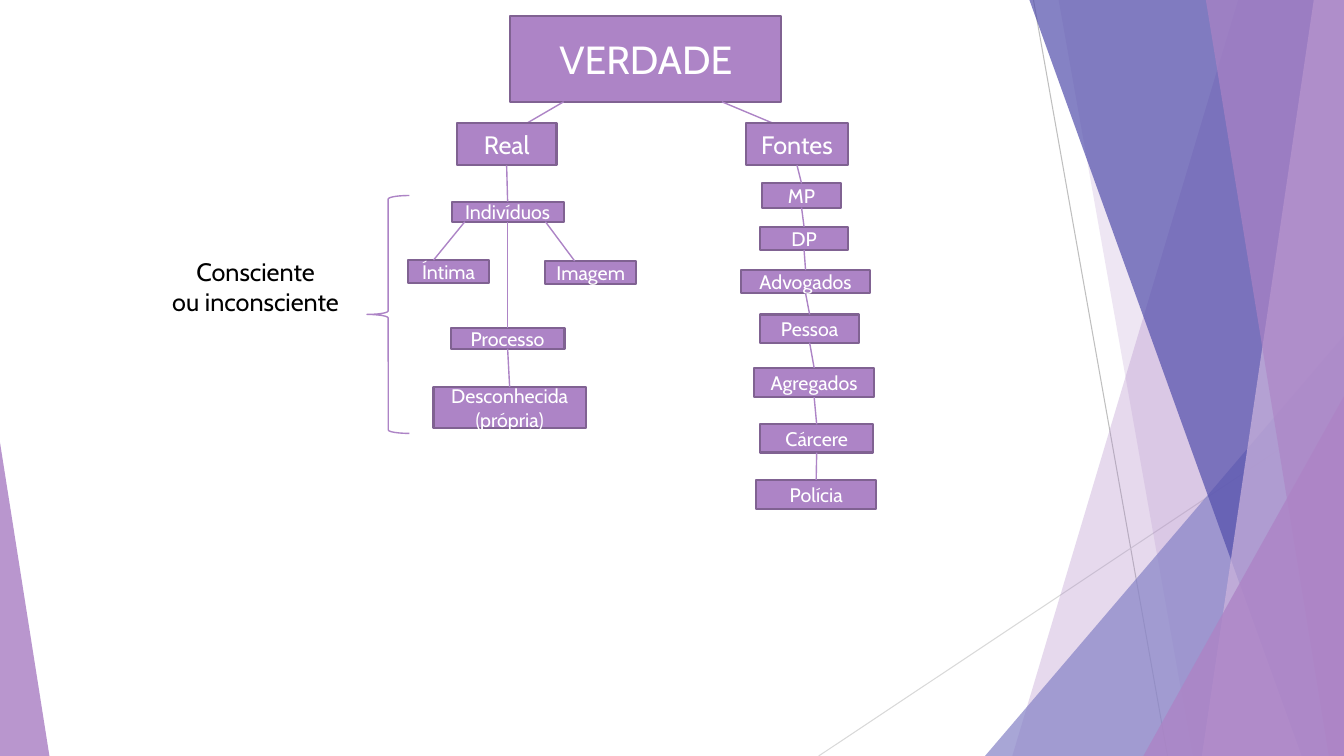
from itertools import pairwise

from lxml.etree import SubElement
from pptx import Presentation
from pptx.dml.color import RGBColor
from pptx.enum.shapes import MSO_CONNECTOR, MSO_SHAPE
from pptx.enum.text import MSO_ANCHOR, PP_ALIGN
from pptx.oxml.ns import qn
from pptx.util import Pt

PX = 9144  # 100 px to the inch
WIDTH, HEIGHT = 1333, 750
FONT = "Cabin"
COLORS = {
    "purple": "AD84C6", "border": "806292", "lilac": "CEB5DD",
    "periwinkle": "8784C7", "indigo": "524EAB", "gray": "BFBFBF",
    "light_gray": "D9D9D9", "white": "FFFFFF", "black": "000000",
}
TOP_SITE, BOTTOM_SITE = 0, 2


def color(name):
    return RGBColor.from_string(COLORS[name])


def px(*lengths):
    return [length * PX for length in lengths]


def fill_shape(shape, name, opacity=100):
    shape.shadow.inherit = False
    shape.fill.solid()
    shape.fill.fore_color.rgb = color(name)
    if opacity < 100:
        srgb = shape.fill._xPr.find(qn("a:solidFill")).find(qn("a:srgbClr"))
        SubElement(srgb, qn("a:alpha"), val=str(opacity * 1000))


def add_line(slide, start, end, name="purple", weight=1):
    line = slide.shapes.add_connector(MSO_CONNECTOR.STRAIGHT, *px(*start, *end))
    line.line.color.rgb = color(name)
    line.line.width = Pt(weight)
    SubElement(line._element.spPr, qn("a:effectLst"))
    return line


def link(slide, upper, lower):
    """Join the bottom middle of one box to the top middle of the next."""
    line = add_line(slide, (0, 0), (0, 0))
    line.begin_connect(upper, BOTTOM_SITE)
    line.end_connect(lower, TOP_SITE)


def write(shape, text, size, name):
    frame = shape.text_frame
    frame.word_wrap = True
    frame.vertical_anchor = MSO_ANCHOR.MIDDLE
    frame.margin_left = frame.margin_right = 0
    frame.text = text
    for paragraph in frame.paragraphs:
        paragraph.alignment = PP_ALIGN.CENTER
        paragraph.font.name = FONT
        paragraph.font.size = Pt(size)
        paragraph.font.color.rgb = color(name)


def add_box(slide, text, left, top, width, height, size=14):
    box = slide.shapes.add_shape(MSO_SHAPE.RECTANGLE, *px(left, top, width, height))
    fill_shape(box, "purple")
    box.line.color.rgb = color("border")
    box.line.width = Pt(1.5)
    write(box, text, size, "white")
    return box


def add_ribbon(slide, width, height, top_x, bottom_x, name, opacity):
    """Fill from a slanted edge to the right side of the area."""
    builder = slide.shapes.build_freeform(top_x, 0, scale=PX)
    builder.add_line_segments([(width, 0), (width, height), (bottom_x, height)])
    ribbon = builder.convert_to_shape()
    fill_shape(ribbon, name, opacity)
    ribbon.line.fill.background()


def add_corner(slide, left, top, width, height, apex, name, opacity):
    corner = slide.shapes.add_shape(
        MSO_SHAPE.ISOSCELES_TRIANGLE, *px(left, top, width, height))
    corner.adjustments[0] = apex
    fill_shape(corner, name, opacity)
    corner.line.fill.background()


def add_backdrop(slide, width, height):
    def right_corner(corner_width, corner_height, name, opacity):
        add_corner(slide, width - corner_width, height - corner_height,
                   corner_width, corner_height, 1, name, opacity)

    def ribbons(*edges):
        for edge in edges:
            add_ribbon(slide, width, height, *edge)

    add_line(slide, (1025, 0), (1158, height), "gray", 0.75)
    add_line(slide, (width, 403), (812, height), "light_gray", 0.75)
    ribbons((1228, 1004, "purple", 30), (1050, 1183, "purple", 20))
    right_corner(356, 417, "periwinkle", 72)
    ribbons((1021, 1291, "indigo", 70), (1303, 1192, "lilac", 70),
            (1196, 1318, "purple", 65))
    right_corner(199, 357, "purple", 80)
    add_corner(slide, 0, height - 311, 49, 311, 0, "purple", 85)


def add_real_branch(slide, left, top):
    def box(text, x, y, width, height, size=14):
        return add_box(slide, text, left + x, top + y, width, height, size)

    real = box("Real", 48, 0, 99, 42, 18)
    individuals = box("Indivíduos", 43, 78, 111, 20)
    box("Íntima", 0, 136, 80, 23)
    box("Imagem", 136, 137, 90, 23)
    process = box("Processo", 42, 203, 113, 21)
    unknown = box("Desconhecida\n(própria)", 25, 262, 151, 41)
    for upper, lower in pairwise([real, individuals, process, unknown]):
        link(slide, upper, lower)
    add_line(slide, (left + 56, top + 98), (left + 25, top + 136))
    add_line(slide, (left + 136, top + 98), (left + 165, top + 137))


def add_sources_branch(slide, left, top):
    sources = [
        ("Fontes", 5, 0, 101, 42, 18),
        ("MP", 21, 60, 78, 24),
        ("DP", 19, 103, 87, 23),
        ("Advogados", 0, 146, 128, 23),
        ("Pessoa", 19, 190, 98, 28),
        ("Agregados", 13, 243, 119, 29),
        ("Cárcere", 19, 299, 112, 28),
        ("Polícia", 15, 354, 119, 29),
    ]
    boxes = [add_box(slide, text, left + x, top + y, *rest)
             for text, x, y, *rest in sources]
    for upper, lower in pairwise(boxes):
        link(slide, upper, lower)


def add_awareness_note(slide, left, top):
    note = slide.shapes.add_textbox(*px(left, top + 38, 205, 104))
    write(note, "Consciente\nou inconsciente", 18, "black")
    brace = slide.shapes.add_shape(
        MSO_SHAPE.LEFT_BRACE, *px(left + 213, top, 42, 236))
    brace.shadow.inherit = False
    brace.fill.background()
    brace.line.color.rgb = color("purple")
    brace.line.width = Pt(1)


def add_truth_heading(slide, left, top):
    width, height, drop = 269, 85, 21
    add_box(slide, "VERDADE", left, top, width, height, 28)
    bottom = top + height
    add_line(slide, (left + 53, bottom), (left + 17, bottom + drop))
    add_line(slide, (left + 210, bottom), (left + 260, bottom + drop))


def main():
    presentation = Presentation()
    presentation.slide_width, presentation.slide_height = px(WIDTH, HEIGHT)
    slide = presentation.slides.add_slide(presentation.slide_layouts[6])
    add_backdrop(slide, WIDTH, HEIGHT)
    add_truth_heading(slide, 506, 16)
    add_awareness_note(slide, 151, 194)
    add_real_branch(slide, 405, 122)
    add_sources_branch(slide, 735, 122)
    presentation.save("out.pptx")


if __name__ == "__main__":
    main()
